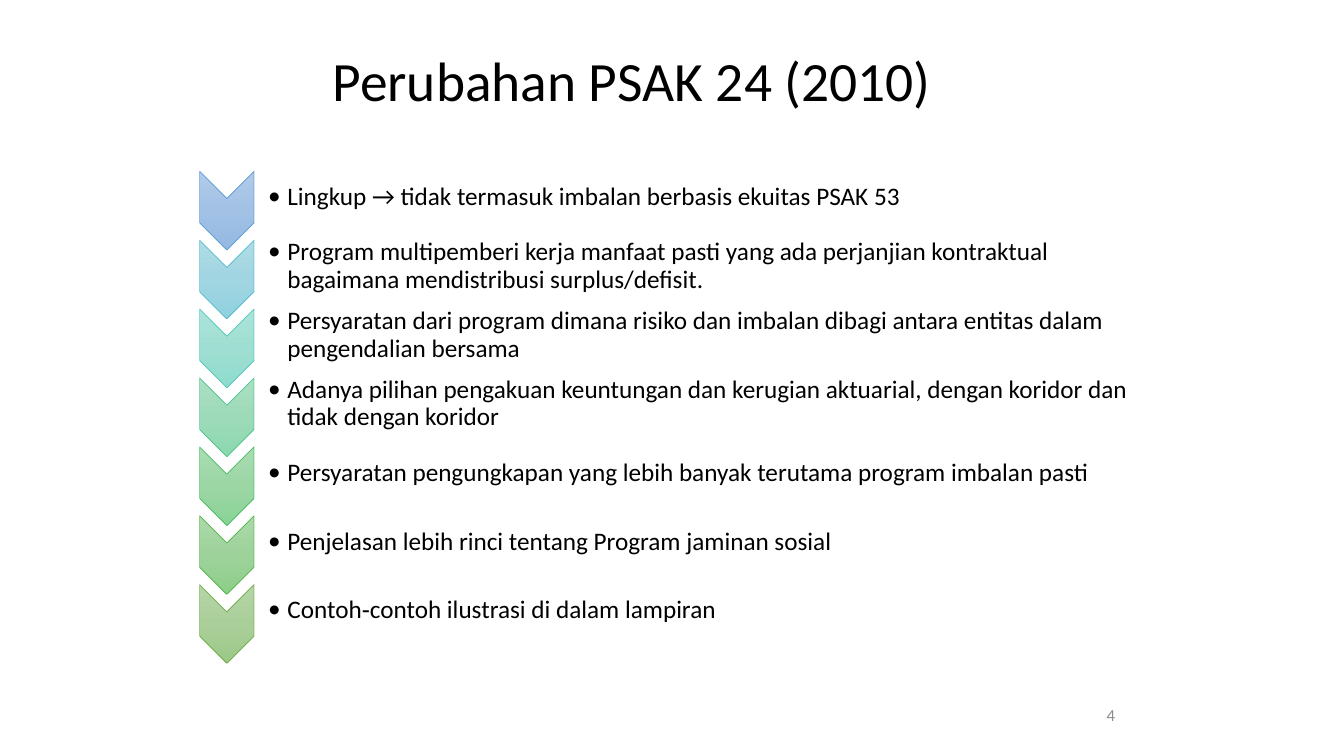
import copy

import lxml.etree
import pptx
import pptx.dml.color
import pptx.enum.shapes
import pptx.enum.text
import pptx.oxml
import pptx.oxml.ns
import pptx.util

Inches = pptx.util.Inches
Pt = pptx.util.Pt
RGBColor = pptx.dml.color.RGBColor
MSO_SHAPE = pptx.enum.shapes.MSO_SHAPE
PP_ALIGN = pptx.enum.text.PP_ALIGN
qn = pptx.oxml.ns.qn

FONT = "Calibri"
BLACK = RGBColor(0x00, 0x00, 0x00)
GRAY = RGBColor(0x8C, 0x8C, 0x8C)
WHITE = RGBColor(0xFF, 0xFF, 0xFF)

CHANGES = [
    ("Lingkup → tidak termasuk imbalan berbasis ekuitas PSAK 53",
     ("B1CBE9", "A3C1E5", "93B9E4"), "5B9BD5"),
    ("Program multipemberi kerja manfaat pasti yang ada perjanjian kontraktual "
     "bagaimana mendistribusi surplus/defisit.",
     ("AFDCE6", "A1D5E1", "90D1E0"), "56BCD0"),
    ("Persyaratan dari program dimana risiko dan imbalan dibagi antara entitas "
     "dalam pengendalian bersama",
     ("ADE3D9", "9FDED2", "8EDCCE"), "52CAB8"),
    ("Adanya pilihan pengakuan keuntungan dan kerugian aktuarial, dengan koridor "
     "dan tidak dengan koridor",
     ("ABE0C3", "9DDAB9", "8CD8AF"), "4DC58D"),
    ("Persyaratan pengungkapan yang lebih banyak terutama program imbalan pasti",
     ("AADCB2", "9CD6A5", "8AD396"), "49BF64"),
    ("Penjelasan lebih rinci tentang Program jaminan sosial",
     ("ABD9A8", "9ED29B", "8DCE88"), "50B846"),
    ("Contoh‐contoh ilustrasi di dalam lampiran",
     ("B5D5A7", "AACE9A", "9CC987"), "70AD47"),
]
ROW_STEP = Inches(4.1) / 6


def add_text(slide, text, left, top, width, height, size, color=BLACK,
             alignment=PP_ALIGN.LEFT):
    shape = slide.shapes.add_textbox(left, top, width, height)
    text_frame = shape.text_frame
    text_frame.text = text
    text_frame.word_wrap = True
    text_frame.vertical_anchor = pptx.enum.text.MSO_ANCHOR.MIDDLE
    paragraph = text_frame.paragraphs[0]
    paragraph.alignment = alignment
    font = paragraph.runs[0].font
    font.name = FONT
    font.size = Pt(size)
    font.color.rgb = color
    return text_frame


def add_bullet(slide, text, top):
    text_frame = add_text(slide, text, Inches(2.52), top, Inches(8.69), Inches(0.46), 18)
    text_frame.margin_left = Inches(0.14)
    text_frame.margin_top = text_frame.margin_right = text_frame.margin_bottom = Inches(0.01)
    paragraph = text_frame.paragraphs[0]
    paragraph.level = 1
    paragraph.line_spacing = 0.9
    paragraph.space_after = Pt(2.7)
    properties = paragraph._p.get_or_add_pPr()
    properties.set("marL", str(Inches(0.19)))
    properties.set("indent", str(-Inches(0.19)))
    lxml.etree.SubElement(properties, qn("a:buFont"), typeface=FONT)
    lxml.etree.SubElement(properties, qn("a:buChar"), char="•")


def add_rotated_shape(slide, preset, left, top, width, height):
    shape = slide.shapes.add_shape(preset, left, top, width, height)
    shape.rotation = 90
    shape.shadow.inherit = False
    return shape


def add_chevron(slide, top, gradient, line_color):
    shape = add_rotated_shape(
        slide, MSO_SHAPE.CHEVRON, Inches(1.86), top, Inches(0.78), Inches(0.54))
    shape.line.color.rgb = RGBColor.from_string(line_color)
    shape.line.width = Pt(0.5)
    shape.fill.gradient()
    shape.fill.gradient_angle = 270
    gradient_fill = shape._element.spPr.find(qn("a:gradFill"))
    gradient_fill.set("rotWithShape", "0")
    stops = gradient_fill.find(qn("a:gsLst"))
    middle_stop = copy.deepcopy(stops[0])
    middle_stop.set("pos", "50000")
    stops.insert(1, middle_stop)
    for stop, color in zip(shape.fill.gradient_stops, gradient):
        stop.color.rgb = RGBColor.from_string(color)


def add_panel(slide, top):
    shape = add_rotated_shape(
        slide, MSO_SHAPE.ROUND_2_SAME_RECTANGLE, Inches(6.63), top, Inches(0.5), Inches(8.71))
    shape.fill.solid()
    shape.fill.fore_color.rgb = WHITE
    shape.line.fill.background()
    color = shape._element.spPr.find(qn("a:solidFill"))[0]
    lxml.etree.SubElement(color, qn("a:alpha"), val="90000")


def main():
    presentation = pptx.Presentation()
    presentation.slide_width = Inches(13.33)
    presentation.slide_height = Inches(7.5)
    slide = presentation.slides.add_slide(presentation.slide_layouts[6])

    title = add_text(slide, "Perubahan PSAK 24 (2010)", Inches(3.2), Inches(0.52),
                     Inches(9), Inches(0.62), 39.6)
    title.paragraphs[0].line_spacing = 0.9
    add_text(slide, "4", Inches(8.83), Inches(6.83), Inches(2.33), Inches(0.52),
             12, GRAY, PP_ALIGN.RIGHT)

    for row, (text, gradient, line_color) in enumerate(CHANGES):
        offset = round(row * ROW_STEP)
        add_chevron(slide, Inches(1.82) + offset, gradient, line_color)
        add_panel(slide, Inches(-2.4) + offset)
        add_bullet(slide, text, Inches(1.73) + offset)

    presentation.save("out.pptx")


if __name__ == "__main__":
    main()
